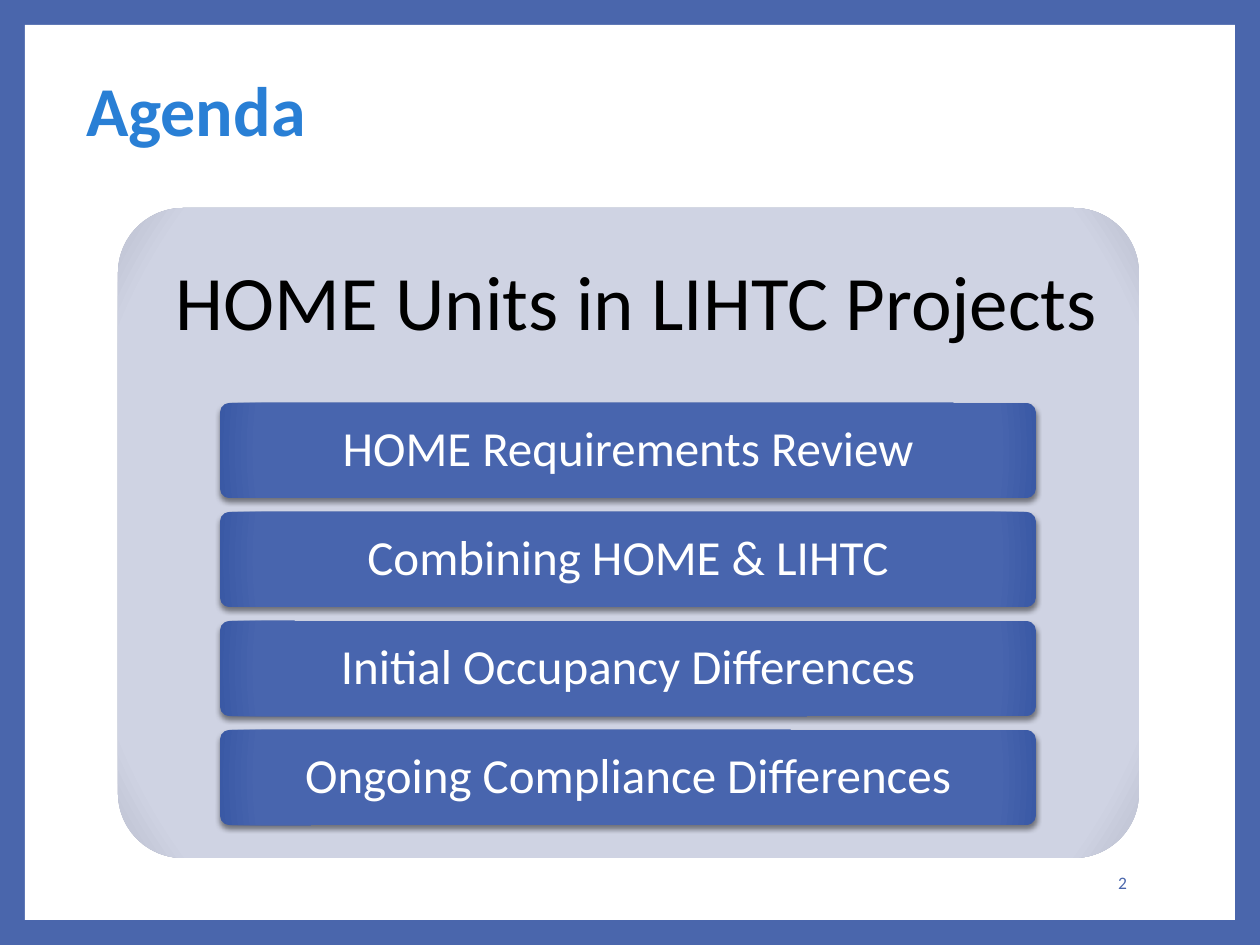
from lxml import etree
from pptx import Presentation
from pptx.dml.color import RGBColor
from pptx.enum.shapes import MSO_SHAPE
from pptx.enum.text import MSO_ANCHOR, PP_ALIGN
from pptx.oxml.ns import qn
from pptx.util import Pt

EMU_PER_PX = 914400 / 126
RECTANGLE, ROUNDED = MSO_SHAPE.RECTANGLE, MSO_SHAPE.ROUNDED_RECTANGLE
MIDDLE = MSO_ANCHOR.MIDDLE
LEFT, CENTER, RIGHT = PP_ALIGN.LEFT, PP_ALIGN.CENTER, PP_ALIGN.RIGHT

FONT = "Calibri"
WHITE = RGBColor(0xFF, 0xFF, 0xFF)
BLACK = RGBColor(0x00, 0x00, 0x00)
FRAME_BLUE = RGBColor(0x4A, 0x66, 0xAC)
TITLE_BLUE = RGBColor(0x29, 0x7F, 0xD5)
PANEL_STOPS = (RGBColor(0xD0, 0xD3, 0xE3), RGBColor(0xCF, 0xD3, 0xE3), RGBColor(0xBB, 0xBF, 0xCF))
BUTTON_STOPS = (FRAME_BLUE, RGBColor(0x48, 0x65, 0xAE), RGBColor(0x3A, 0x59, 0xA5))
STOP_POSITIONS = (0, 90, 100)

TOPICS = (
    "HOME Requirements Review",
    "Combining HOME & LIHTC",
    "Initial Occupancy Differences",
    "Ongoing Compliance Differences",
)
BUTTON_TOP, BUTTON_PITCH = 403, 109


def px(*lengths):
    """Turn pixel lengths into EMU."""
    return [round(length * EMU_PER_PX) for length in lengths]


def add_child(parent, tag, **attributes):
    """Append a DrawingML element with the given attributes."""
    values = {name: str(value) for name, value in attributes.items()}
    return etree.SubElement(parent, qn(tag), values)


def add_block(page, kind, bounds):
    """Add a preset shape with no line and no shadow."""
    shape = page.shapes.add_shape(kind, *px(*bounds))
    shape.shadow.inherit = False
    shape.line.fill.background()
    return shape


def add_gradient_block(page, bounds, colors):
    """Add a rounded block filled with a circular gradient."""
    shape = add_block(page, ROUNDED, bounds)
    shape.adjustments[0] = 0.1
    shape.fill.background()
    properties = shape.element.spPr
    gradient = etree.Element(qn("a:gradFill"), {"rotWithShape": "1"})
    stops = add_child(gradient, "a:gsLst")
    for position, color in zip(STOP_POSITIONS, colors):
        stop = add_child(stops, "a:gs", pos=position * 1000)
        add_child(stop, "a:srgbClr", val=color)
    circle = add_child(gradient, "a:path", path="circle")
    add_child(circle, "a:fillToRect", l=100000, t=100000, r=100000, b=100000)
    properties.replace(properties.find(qn("a:noFill")), gradient)
    return shape


def add_drop_shadow(shape):
    """Give a shape a soft shadow straight below it."""
    effects = shape.element.spPr.find(qn("a:effectLst"))
    shadow = add_child(effects, "a:outerShdw", blurRad=Pt(3), dist=Pt(2), dir=5400000, rotWithShape=0)
    color = add_child(shadow, "a:srgbClr", val=BLACK)
    add_child(color, "a:alpha", val=45000)


def write_text(shape, text, size, color, align, insets=(13, 6, 13, 6), bold=False, spacing=0.9):
    """Write one vertically centred paragraph into a shape."""
    frame = shape.text_frame
    frame.word_wrap = True
    frame.vertical_anchor = MIDDLE
    frame.margin_left, frame.margin_top, frame.margin_right, frame.margin_bottom = px(*insets)
    para = frame.paragraphs[0]
    para.alignment = align
    para.line_spacing = spacing
    span = para.add_run()
    span.text = text
    span.font.name = FONT
    span.font.size = Pt(size)
    span.font.bold = bold
    span.font.color.rgb = color


def add_text(page, bounds, *args, **options):
    """Add a text box holding one paragraph."""
    write_text(page.shapes.add_textbox(*px(*bounds)), *args, **options)


def add_button(page, top, topic):
    """Add one shaded agenda button."""
    button = add_gradient_block(page, (220, top, 816, 95), BUTTON_STOPS)
    add_drop_shadow(button)
    write_text(button, topic, 28, WHITE, CENTER, insets=(13, 10, 13, 10))


def main():
    """Build the agenda slide and save it."""
    deck = Presentation()
    deck.slide_width, deck.slide_height = px(1260, 945)
    page = deck.slides.add_slide(deck.slide_layouts[6])
    background = page.background.fill
    background.solid()
    background.fore_color.rgb = FRAME_BLUE

    sheet = add_block(page, RECTANGLE, (25, 25, 1210, 895))
    sheet.fill.solid()
    sheet.fill.fore_color.rgb = WHITE
    add_text(page, (73, 21, 1113, 186), "Agenda", 40, TITLE_BLUE, LEFT, bold=True)

    add_gradient_block(page, (118, 208, 1021, 650), PANEL_STOPS)
    add_text(page, (118, 208, 1021, 195), "HOME Units in LIHTC Projects", 44, BLACK, CENTER,
             insets=(40, 23, 23, 23))
    for index, topic in enumerate(TOPICS):
        add_button(page, BUTTON_TOP + index * BUTTON_PITCH, topic)

    add_text(page, (964, 858, 176, 50), "2", 10, FRAME_BLUE, RIGHT, spacing=1.0)
    deck.save("out.pptx")


if __name__ == "__main__":
    main()
